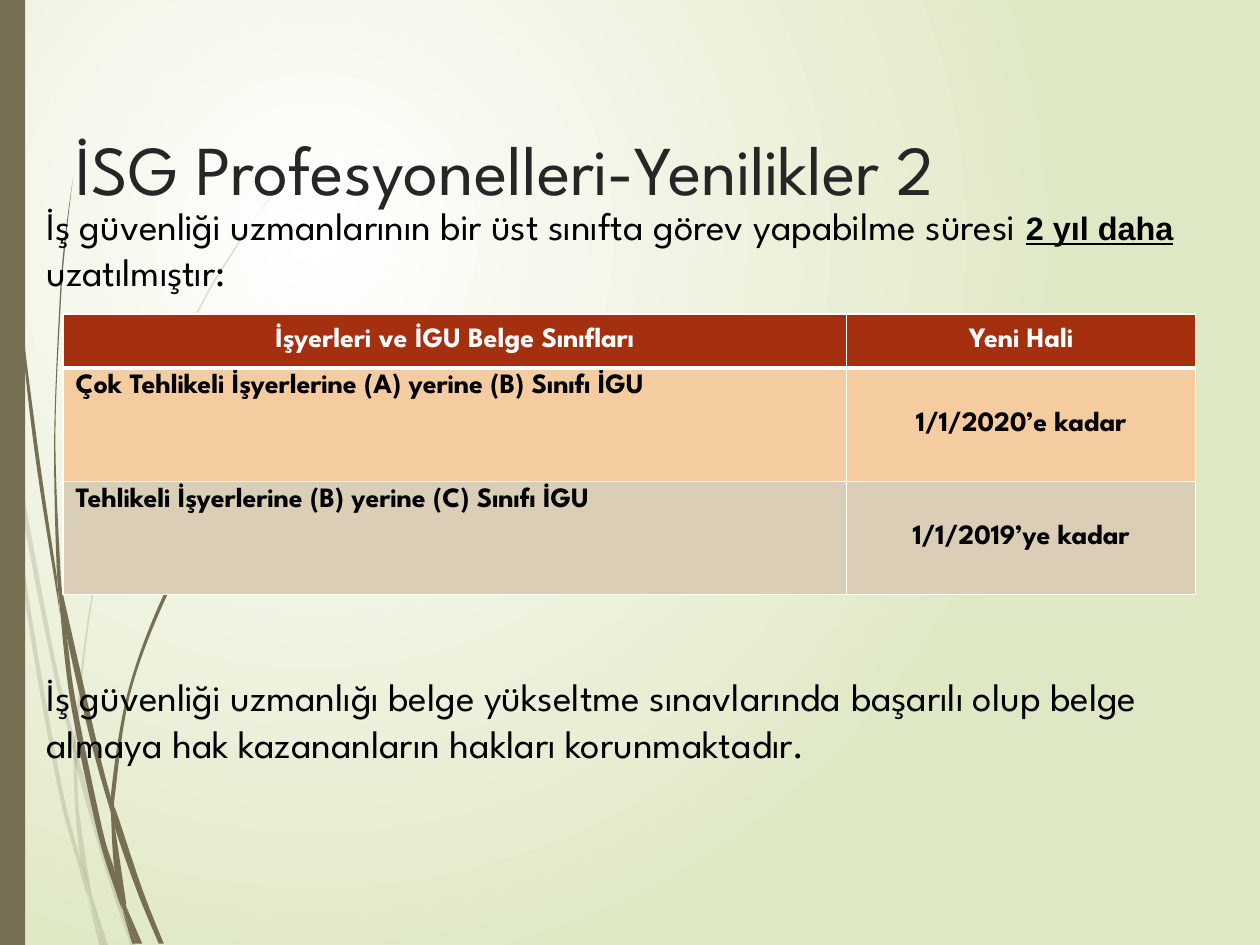
from lxml import etree
from pptx import Presentation
from pptx.dml.color import RGBColor
from pptx.enum.lang import MSO_LANGUAGE_ID
from pptx.enum.shapes import MSO_SHAPE
from pptx.enum.text import MSO_ANCHOR, MSO_AUTO_SIZE, PP_ALIGN
from pptx.oxml.ns import qn
from pptx.util import Inches, Pt

RECTANGLE = MSO_SHAPE.RECTANGLE
TOP, MIDDLE, BOTTOM = MSO_ANCHOR.TOP, MSO_ANCHOR.MIDDLE, MSO_ANCHOR.BOTTOM
LEFT, CENTER = PP_ALIGN.LEFT, PP_ALIGN.CENTER
NO_FIT = MSO_AUTO_SIZE.NONE
TURKISH = MSO_LANGUAGE_ID.TURKISH

# Content
WIDTH, HEIGHT = 10, 7.5
FONT = "League Spartan"
STEM, WHITE, BLACK = "766F54", "FFFFFF", "000000"
BACKGROUND = [WHITE, "DFE8C4"]
TITLE = "İSG Profesyonelleri-Yenilikler 2"
PLAIN = dict(name=FONT, size=Pt(22.2), color=BLACK)
STRONG = dict(name="Arial", size=Pt(18.5), color=BLACK, bold=True, underline=True)
# Each paragraph: space before in points, then its runs
BODY = [
    (10, [("İş güvenliği uzmanlarının bir üst sınıfta görev yapabilme süresi ", PLAIN),
          ("2 yıl daha ", STRONG), ("uzatılmıştır:", PLAIN)]),
    (216, [("İş güvenliği uzmanlığı belge yükseltme sınavlarında başarılı olup belge "
            "almaya hak kazananların hakları korunmaktadır.", PLAIN)]),
]
TABLE = [
    ("İşyerleri ve İGU Belge Sınıfları", "Yeni Hali"),
    ("Çok Tehlikeli İşyerlerine (A) yerine (B) Sınıfı İGU", "1/1/2020’e kadar"),
    ("Tehlikeli İşyerlerine (B) yerine (C) Sınıfı İGU", "1/1/2019’ye kadar"),
]
ROW_FILLS = ["A53010", "F5CBA0", "DBCEB7"]
COLUMNS, ROWS = [6.22, 2.77], [0.43, 0.9, 0.9]

# Grass blades: the two curved edges of each, joined end to end
PALE_BLADES = [
    ([(.08, 3.5), (.06, 3.22), (0, 2.82)], [(0, 2.99), (.07, 3.44), (.08, 3.5)]),
    ([(.1, 3.45), (.12, 3.76), (.4, 5.22), (.59, 5.99)], [(.59, 5.86), (.43, 5.2), (.1, 3.45)]),
    ([(.61, 5.96), (.61, 6.1), (.85, 6.94), (1.04, 7.51)],
     [(1.08, 7.51), (.88, 6.92), (.64, 6.07), (.61, 5.96)]),
    ([(.73, 7.11), (.83, 7.51)], [(.86, 7.51), (.73, 7.11)]),
    ([(.08, 3.5), (.19, 4.7), (.45, 6.21), (.64, 6.93), (.7, 7.14)],
     [(.69, 7.07), (.64, 6.83), (.48, 6.19), (.22, 4.69), (.12, 3.76), (.08, 3.5)]),
    ([(.58, 5.99), (.6, 6.46), (.64, 6.83), (.67, 6.92), (.73, 7.11)],
     [(.72, 7.06), (.63, 6.46), (.61, 6.1), (.58, 5.99)]),
    ([(.61, 5.96), (.61, 5.84), (.76, 4.62), (1.11, 3.49), (1.59, 2.45), (1.87, 1.98),
      (2.01, 1.75), (2.17, 1.54)],
     [(2.17, 1.53), (2.01, 1.75), (1.86, 1.97), (1.58, 2.44), (1.1, 3.48), (.75, 4.61),
      (.59, 5.84), (.61, 5.96)]),
    ([(.7, 7.14), (.79, 7.51)], [(.82, 7.51), (.7, 7.14)]),
    ([(.58, 5.99), (.61, 6.1)], [(.61, 5.96), (.59, 5.86), (.58, 5.99)]),
    ([(.65, 6.83), (.69, 7.07), (.82, 7.51)], [(.83, 7.51), (.73, 7.11), (.65, 6.83)]),
]
DARK_BLADES = [
    ([(.02, 0), (.03, .48), (.05, 1.1), (.14, 2.33), (.27, 3.55), (.46, 4.77), (.47, 4.81)],
     [(.45, 4.57), (.3, 3.55), (.15, 2.32), (.06, 1.09), (.04, .48), (.03, 0)]),
    ([(.5, 4.72), (.53, 5.05), (.73, 5.92), (.88, 6.45)],
     [(.88, 6.33), (.77, 5.9), (.5, 4.72)]),
    ([(.91, 6.41), (.91, 6.56), (1.09, 7.08), (1.26, 7.49)],
     [(1.3, 7.49), (1.13, 7.06), (.94, 6.49), (.91, 6.41)]),
    ([(.47, 4.77), (.56, 5.57), (.77, 6.59), (.92, 7.08), (.97, 7.22)],
     [(.96, 7.17), (.91, 6.91), (.81, 6.57), (.6, 5.56), (.53, 5.05), (.47, 4.77)]),
    ([(.5, 4.72), (.48, 4.53), (.44, 3.49), (.48, 2.45), (.52, 1.93), (.58, 1.41)],
     [(.58, 1.41), (.51, 1.93), (.47, 2.45), (.43, 3.49), (.45, 4.49), (.49, 4.72)]),
    ([(1, 7.19), (1.1, 7.49)], [(1.13, 7.49), (1, 7.19)]),
    ([(.45, 4.49), (.47, 4.77), (.53, 5.05)], [(.5, 4.72), (.45, 4.49)]),
    ([(.91, 6.41), (.91, 6.33), (1.03, 5.52), (1.31, 4.76), (1.69, 4.06), (1.91, 3.74),
      (2.03, 3.59), (2.16, 3.44)],
     [(2.15, 3.44), (2.03, 3.58), (1.91, 3.73), (1.68, 4.05), (1.29, 4.74), (1.01, 5.51),
      (.88, 6.31), (.91, 6.41)]),
    ([(.97, 7.22), (1.05, 7.49)], [(1.08, 7.49), (.97, 7.22)]),
    ([(.88, 6.45), (.91, 6.91), (1, 7.19)], [(1, 7.16), (.91, 6.56), (.88, 6.45)]),
    ([(.88, 6.31), (.88, 6.45), (.91, 6.56)], [(.91, 6.41), (.88, 6.31)]),
    ([(.91, 6.91), (.96, 7.17), (1.08, 7.49)], [(1.1, 7.49), (1, 7.19), (.91, 6.91)]),
]


def paint(fill, color):
    fill.solid()
    fill.fore_color.rgb = RGBColor.from_string(color)


def add_run(para, text, style):
    span = para.add_run()
    span.text = text
    span.font.language_id = TURKISH
    for key, value in style.items():
        if key == "color":
            span.font.color.rgb = RGBColor.from_string(value)
        else:
            setattr(span.font, key, value)


def bend_edges(blade, corner):
    """Turn the straight segments of both edges into smooth curves."""
    segments = list(blade._element.iter(qn("a:moveTo"), qn("a:lnTo")))
    points = [(int(s[0].get("x")), int(s[0].get("y"))) for s in segments]
    for start, end in ((0, corner), (corner, len(points))):
        edge = points[start:end]
        padded = [edge[0], *edge, edge[-1]]
        for i, segment in enumerate(segments[start + 1:end]):
            a, b, c, d = padded[i:i + 4]
            first = [q + (r - p) / 6 for p, q, r in zip(a, b, c)]
            second = [q - (r - p) / 6 for p, q, r in zip(b, c, d)]
            segment.tag = qn("a:cubicBezTo")
            for position, (x, y) in enumerate((first, second)):
                handle = etree.Element(qn("a:pt"), x=str(round(x)), y=str(round(y)))
                segment.insert(position, handle)


def add_blades(page, blades, alpha=None):
    group = page.shapes.add_group_shape()
    for edges in blades:
        outline = [(Inches(x), Inches(y)) for edge in edges for x, y in edge]
        builder = group.shapes.build_freeform(*outline[0])
        builder.add_line_segments(outline[1:], close=False)
        blade = builder.convert_to_shape()
        bend_edges(blade, len(edges[0]))
        blade.shadow.inherit = False
        blade.line.fill.background()
        paint(blade.fill, STEM)
        if alpha:
            color = blade.fill._xPr.find(".//" + qn("a:srgbClr"))
            etree.SubElement(color, qn("a:alpha"), val=str(alpha * 1000))


def add_borders(cell):
    properties = cell._tc.get_or_add_tcPr()
    for side, points in (("L", 1), ("R", 1), ("T", 1), ("B", 3)):
        line = etree.SubElement(properties, qn(f"a:ln{side}"), w=str(Pt(points)))
        solid = etree.SubElement(line, qn("a:solidFill"))
        etree.SubElement(solid, qn("a:srgbClr"), val=WHITE)


deck = Presentation()
deck.slide_width, deck.slide_height = Inches(WIDTH), Inches(HEIGHT)
page = deck.slides.add_slide(deck.slide_layouts[5])

# Radial background
backdrop = page.background.fill
backdrop.gradient()
for stop, color in zip(backdrop.gradient_stops, BACKGROUND):
    stop.color.rgb = RGBColor.from_string(color)
gradient = page._element.find(".//" + qn("a:gradFill"))
gradient.remove(gradient.find(qn("a:lin")))
circle = etree.SubElement(gradient, qn("a:path"), {"path": "circle"})
etree.SubElement(circle, qn("a:fillToRect"), l="50000", t="50000", r="100000", b="100000")

# Grass and side bar
add_blades(page, PALE_BLADES, alpha=20)
add_blades(page, DARK_BLADES)
bar = page.shapes.add_shape(RECTANGLE, 0, 0, Inches(0.2), Inches(HEIGHT))
bar.shadow.inherit = False
bar.line.fill.background()
paint(bar.fill, STEM)

# Title, brought in front of the grass
title = page.shapes.title
title.left, title.top, title.width, title.height = map(Inches, (0.5, 0.85, 9, 0.86))
frame = title.text_frame
frame.auto_size, frame.vertical_anchor, frame.word_wrap = NO_FIT, BOTTOM, True
frame.paragraphs[0].alignment = LEFT
add_run(frame.paragraphs[0], TITLE, dict(name=FONT, size=Pt(40), color="262626"))
page.shapes._spTree.append(title._element)

# Body text above and below the table
box = page.shapes.add_textbox(*map(Inches, (0.27, 1.55, 9.45, 4.8)))
frame = box.text_frame
frame.word_wrap = True
for index, (space, runs) in enumerate(BODY):
    para = frame.add_paragraph() if index else frame.paragraphs[0]
    para.space_before = Pt(space)
    for text, style in runs:
        add_run(para, text, style)

# Table
table = page.shapes.add_table(len(ROWS), len(COLUMNS), Inches(0.5), Inches(2.49),
                              Inches(sum(COLUMNS)), Inches(sum(ROWS))).table
for column, width in zip(table.columns, COLUMNS):
    column.width = Inches(width)
for r, (texts, height, color) in enumerate(zip(TABLE, ROWS, ROW_FILLS)):
    table.rows[r].height = Inches(height)
    for c, text in enumerate(texts):
        cell = table.cell(r, c)
        label = r > 0 and c == 0
        cell.vertical_anchor = TOP if label else MIDDLE
        if r == 0:
            add_borders(cell)
        paint(cell.fill, color)
        para = cell.text_frame.paragraphs[0]
        para.alignment = LEFT if label else CENTER
        add_run(para, text, dict(name=FONT, size=Pt(16), bold=True, color=BLACK if r else WHITE))

deck.save("out.pptx")
